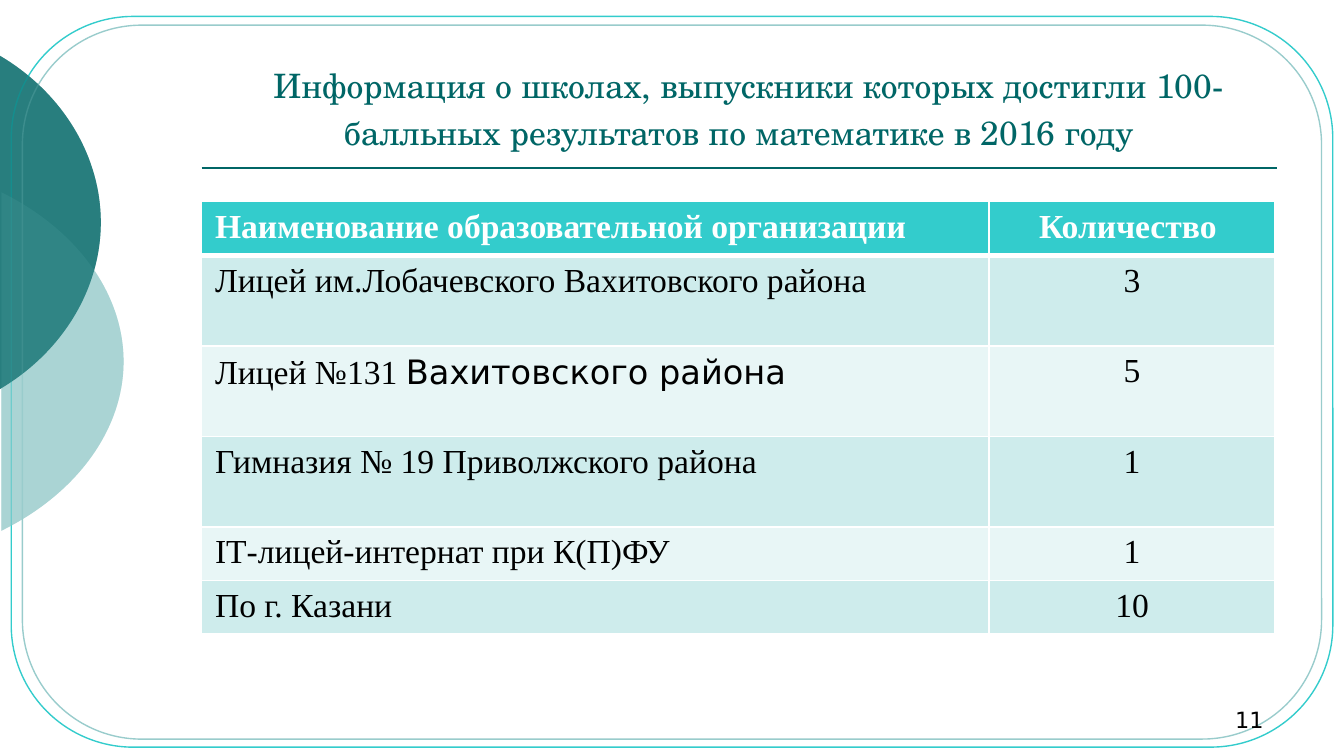
from lxml.etree import SubElement
from pptx import Presentation
from pptx.dml.color import RGBColor
from pptx.enum.shapes import MSO_CONNECTOR, MSO_SHAPE
from pptx.enum.text import MSO_ANCHOR, MSO_AUTO_SIZE, PP_ALIGN
from pptx.oxml.ns import qn
from pptx.util import Pt

DARK_TEAL = RGBColor(0x00, 0x66, 0x66)
TURQUOISE = RGBColor(0x33, 0xCC, 0xCC)
PALE_TEAL = RGBColor(0x99, 0xCC, 0xCC)
BAND_DARK = RGBColor(0xCE, 0xEC, 0xEC)
BAND_LIGHT = RGBColor(0xE8, 0xF6, 0xF6)
WHITE = RGBColor(0xFF, 0xFF, 0xFF)
BLACK = RGBColor(0x00, 0x00, 0x00)

SERIF = "Times New Roman"
SANS = "DejaVu Sans"
TITLE_FONT = "TeX Gyre Schola"

TITLE = ("Информация о школах, выпускники которых достигли 100- "
         "балльных результатов по математике в 2016 году")
HEADER = ("Наименование образовательной организации", "Количество ")
# Each school name is a list of (text, font) pieces
SCHOOLS = [
    ([("Лицей им.Лобачевского Вахитовского района", SERIF)], "3"),
    ([("Лицей №131 ", SERIF), ("Вахитовского района", SANS)], "5"),
    ([("Гимназия № 19 Приволжского района", SERIF)], "1"),
    ([("IТ-лицей-интернат при К(П)ФУ", SERIF)], "1"),
    ([("По г. Казани", SERIF)], "10"),
]
COLUMN_WIDTHS = (421.9, 153.2)
ROW_HEIGHTS = (29, 48.5, 48.5, 48.5, 28.7, 28.3)


def set_values(target, values):
    for name, value in values.items():
        setattr(target, name, value)


def add_run(paragraph, text, color, **values):
    run = paragraph.add_run()
    run.text = text
    set_values(run.font, values)
    run.font.color.rgb = color


def place(shape, box):
    set_values(shape, dict(zip(("left", "top", "width", "height"), map(Pt, box))))


def add_disc_edge(slide, box, edge, color, opacity):
    """Fill the right end of a disc; edge gives its chord x, top and bottom in the box."""
    left, top, width, height = box
    chord, upper, lower = edge
    middle, half, depth = (upper + lower) / 2, (lower - upper) / 2, width - chord
    shoulder, rise, pull = chord + 0.62 * depth, 0.78 * half, 0.4 * half
    curves = [
        [(shoulder, middle - rise), (width, middle - pull), (width, middle)],
        [(width, middle + pull), (shoulder, middle + rise), (chord, lower)],
    ]
    builder = slide.shapes.build_freeform(Pt(left), Pt(top))
    builder.add_line_segments([(Pt(left + width), Pt(top)),
                               (Pt(left + width), Pt(top + height)),
                               (Pt(left), Pt(top + height))])
    shape = builder.convert_to_shape()
    properties = shape._element.spPr
    outline = properties.find(".//" + qn("a:path"))
    for child in list(outline):
        outline.remove(child)
    for tag, points in [("a:moveTo", [(chord, upper)])] + [
            ("a:cubicBezTo", points) for points in curves]:
        segment = SubElement(outline, qn(tag))
        for x, y in points:
            SubElement(segment, qn("a:pt"), x=str(Pt(x)), y=str(Pt(y)))
    SubElement(outline, qn("a:close"))
    shape.shadow.inherit = False
    shape.fill.solid()
    shape.fill.fore_color.rgb = color
    shape.line.fill.background()
    tint = properties.find(".//" + qn("a:srgbClr"))
    SubElement(tint, qn("a:alpha"), val=str(opacity * 1000))


def add_discs(slide):
    add_disc_edge(slide, (-221.8, 85.7, 288, 216), (222.5, 17.3, 198.7), PALE_TEAL, 58)
    add_disc_edge(slide, (-264.2, 0, 318.2, 238.3), (263.5, 29.5, 208.8), DARK_TEAL, 60)


def add_frame(slide, box, color):
    frame = slide.shapes.add_shape(MSO_SHAPE.ROUNDED_RECTANGLE, *map(Pt, box))
    frame.adjustments[0] = 0.167
    frame.shadow.inherit = False
    frame.fill.background()
    frame.line.color.rgb = color
    frame.line.width = Pt(0.75)


def add_rule(slide, left, top, width):
    rule = slide.shapes.add_connector(
        MSO_CONNECTOR.STRAIGHT, Pt(left), Pt(top), Pt(left + width), Pt(top))
    rule.line.color.rgb = DARK_TEAL
    rule.line.width = Pt(1)
    SubElement(rule._element.spPr, qn("a:effectLst"))


def fill_title(slide, box):
    title = slide.shapes.title
    place(title, box)
    set_values(title.text_frame, {"auto_size": MSO_AUTO_SIZE.NONE, "word_wrap": True,
                                  "vertical_anchor": MSO_ANCHOR.BOTTOM})
    paragraph = title.text_frame.paragraphs[0]
    paragraph.alignment = PP_ALIGN.CENTER
    add_run(paragraph, " ", DARK_TEAL, name=TITLE_FONT, size=Pt(36))
    add_run(paragraph, TITLE, DARK_TEAL, name=TITLE_FONT, size=Pt(18))


def set_header_borders(cell):
    properties = cell._tc.get_or_add_tcPr()
    for side, width in (("L", 1), ("R", 1), ("T", 1), ("B", 3)):
        line = SubElement(properties, qn("a:ln" + side), w=str(Pt(width)))
        fill = SubElement(line, qn("a:solidFill"))
        SubElement(fill, qn("a:srgbClr"), val=str(WHITE))


def add_school_table(slide, left, top):
    rows = [([(HEADER[0], SERIF)], HEADER[1])] + SCHOOLS
    table = slide.shapes.add_table(
        len(rows), len(COLUMN_WIDTHS), Pt(left), Pt(top),
        Pt(sum(COLUMN_WIDTHS)), Pt(sum(ROW_HEIGHTS))).table
    for column, width in zip(table.columns, COLUMN_WIDTHS):
        column.width = Pt(width)
    for index, (name, count) in enumerate(rows):
        table.rows[index].height = Pt(ROW_HEIGHTS[index])
        is_header = index == 0
        band = TURQUOISE if is_header else (BAND_LIGHT, BAND_DARK)[index % 2]
        contents = ((name, PP_ALIGN.LEFT), ([(count, SERIF)], PP_ALIGN.CENTER))
        for cell, (pieces, alignment) in zip(table.rows[index].cells, contents):
            if is_header:
                set_header_borders(cell)
            cell.fill.solid()
            cell.fill.fore_color.rgb = band
            paragraph = cell.text_frame.paragraphs[0]
            paragraph.alignment = alignment
            for text, font in pieces:
                add_run(paragraph, text, WHITE if is_header else BLACK,
                        name=font, size=Pt(18), bold=is_header)


def add_page_number(slide, box, number):
    text_frame = slide.shapes.add_textbox(*map(Pt, box)).text_frame
    set_values(text_frame, {"word_wrap": True, "vertical_anchor": MSO_ANCHOR.BOTTOM})
    paragraph = text_frame.paragraphs[0]
    paragraph.alignment = PP_ALIGN.RIGHT
    add_run(paragraph, number, BLACK, name=SANS, size=Pt(12))


def main():
    presentation = Presentation()
    set_values(presentation, {"slide_width": Pt(720), "slide_height": Pt(405)})
    slide = presentation.slides.add_slide(presentation.slide_layouts[5])
    add_discs(slide)
    add_frame(slide, (6, 8.8, 708, 391.5), TURQUOISE)
    add_frame(slide, (12, 13.5, 696, 382.5), PALE_TEAL)
    add_rule(slide, 108, 90, 576)
    # A second layer deepens the discs and tints the frames beneath them
    add_discs(slide)
    fill_title(slide, (108, 18, 576, 67))
    add_school_table(slide, 108, 108)
    add_page_number(slide, (516, 369, 168, 27), "11")
    presentation.save("out.pptx")


if __name__ == "__main__":
    main()
